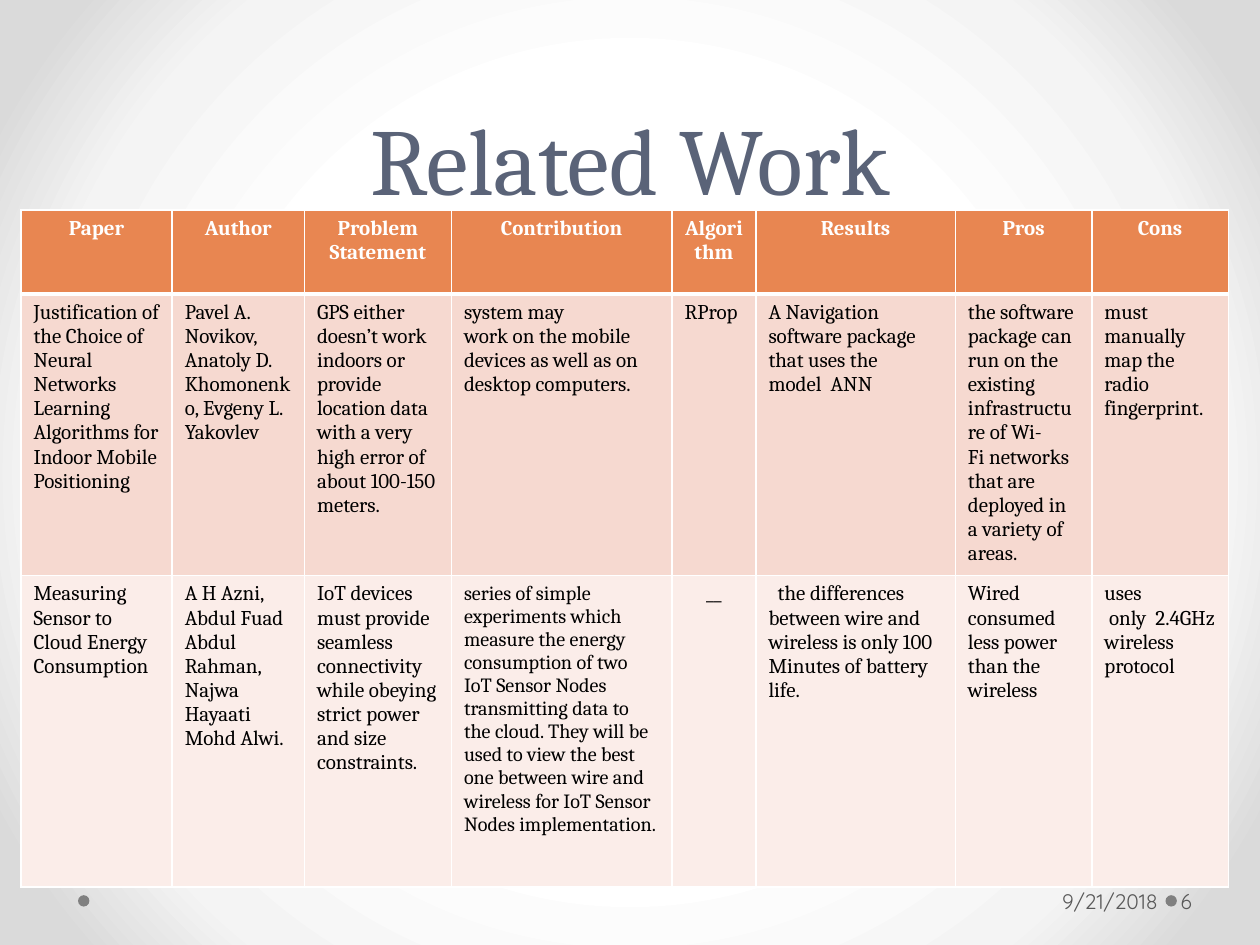
from lxml import etree
from pptx import Presentation
from pptx.dml.color import RGBColor
from pptx.enum.shapes import MSO_SHAPE
from pptx.enum.text import MSO_ANCHOR, PP_ALIGN
from pptx.oxml.ns import qn
from pptx.util import Pt

LEFT, MID, RIGHT = PP_ALIGN.LEFT, PP_ALIGN.CENTER, PP_ALIGN.RIGHT
TOP, CENTRE, BASE = MSO_ANCHOR.TOP, MSO_ANCHOR.MIDDLE, MSO_ANCHOR.BOTTOM
OVAL = MSO_SHAPE.OVAL

WHITE = RGBColor(0xFF, 0xFF, 0xFF)
BLACK = RGBColor(0, 0, 0)
SLATE = RGBColor(0x5A, 0x63, 0x78)
GREY = RGBColor(0x59, 0x59, 0x59)
DOT = RGBColor(0x80, 0x80, 0x80)
ORANGE = RGBColor(0xE8, 0x86, 0x51)
PEACH = RGBColor(0xF6, 0xD9, 0xD0)
BLUSH = RGBColor(0xFB, 0xED, 0xE9)
GLOW = [(50, WHITE), (76, RGBColor(0xF4, 0xF4, 0xF4)),
        (92, RGBColor(0xDA, 0xDA, 0xDA))]

SERIF, SANS = "Cambria", "Quicksand"

WIDTHS = [86.4, 75.6, 84, 126, 48, 114, 78, 78]
HEIGHTS = [48, 161, 178]
FILLS = [ORANGE, PEACH, BLUSH]
ROWS = [
    ["Paper", "Author", "Problem Statement", "Contribution",
     "Algorithm", "Results", "Pros", "Cons"],
    ["Justification of the Choice of Neural Networks Learning Algorithms "
     "for Indoor Mobile Positioning",
     "Pavel A. Novikov,  Anatoly D. Khomonenko, Evgeny L. Yakovlev",
     "GPS either doesn’t work indoors or provide location data with a very "
     "high error of about 100-150 meters.",
     "system may\nwork on the mobile devices as well as on desktop computers.",
     "RProp",
     "A Navigation software package that uses the\nmodel  ANN",
     "the software package can run on the existing infrastructure of Wi-\n"
     "Fi networks that are deployed in a variety of areas.",
     "must manually map the radio\nfingerprint."],
    ["Measuring Sensor to Cloud Energy Consumption",
     "A H Azni, Abdul Fuad Abdul Rahman, Najwa Hayaati Mohd Alwi.",
     "IoT devices must provide seamless connectivity while obeying\n"
     "strict power and size constraints.",
     "series of simple experiments which measure the energy consumption of "
     "two IoT Sensor Nodes transmitting data to the cloud. They will be used "
     "to view the best one between wire and wireless for IoT Sensor Nodes "
     "implementation.",
     "__",
     "  the differences between wire and wireless is only 100\n"
     "Minutes of battery life.",
     "Wired consumed less power than the wireless",
     "uses\n only  2.4GHz wireless protocol"],
]


def write(frame, text, size=12, font=SERIF, color=BLACK, bold=False,
          align=LEFT, anchor=TOP, space=None):
    """Fill a text frame, one paragraph for each line of text."""
    frame.word_wrap = True
    frame.vertical_anchor = anchor
    frame.text = text
    for para in frame.paragraphs:
        para.alignment = align
        if space:
            para.line_spacing = Pt(space)
        for run in para.runs:
            run.font.size = Pt(size)
            run.font.name = font
            run.font.bold = bold
            run.font.color.rgb = color


def paint_back(slide):
    """Radial glow, white at the centre."""
    slide.background.fill.solid()
    solid = next(slide.element.iter(qn("a:solidFill")))
    grad = etree.Element(qn("a:gradFill"), rotWithShape="1")
    stops = etree.SubElement(grad, qn("a:gsLst"))
    for pos, color in GLOW:
        stop = etree.SubElement(stops, qn("a:gs"), pos=str(pos * 1000))
        etree.SubElement(stop, qn("a:srgbClr"), val=str(color))
    ring = etree.SubElement(grad, qn("a:path"), path="circle")
    etree.SubElement(ring, qn("a:fillToRect"),
                     {side: "50000" for side in "ltrb"})
    solid.getparent().replace(solid, grad)


def add_title(slide, left, top, width, height):
    title = slide.shapes.title
    title.left, title.top = Pt(left), Pt(top)
    title.width, title.height = Pt(width), Pt(height)
    write(title.text_frame, "Related Work", size=54, color=SLATE,
          align=MID, anchor=BASE, space=58)


def edge_cell(cell, row):
    """White cell borders, thicker under the header."""
    thick = {0: "B", 1: "T"}.get(row)
    props = cell._tc.get_or_add_tcPr()
    for i, side in enumerate("LRTB"):
        width = Pt(3 if side == thick else 1)
        line = etree.Element(qn("a:ln" + side), w=str(width))
        fill = etree.SubElement(line, qn("a:solidFill"))
        etree.SubElement(fill, qn("a:srgbClr"), val=str(WHITE))
        props.insert(i, line)


def add_grid(slide, left, top):
    """Comparison table of the papers."""
    grid = slide.shapes.add_table(
        len(HEIGHTS), len(WIDTHS), Pt(left), Pt(top),
        Pt(sum(WIDTHS)), Pt(sum(HEIGHTS))).table
    for col, width in zip(grid.columns, WIDTHS):
        col.width = Pt(width)
    for r, texts in enumerate(ROWS):
        grid.rows[r].height = Pt(HEIGHTS[r])
        head = r == 0
        for c, text in enumerate(texts):
            cell = grid.cell(r, c)
            write(cell.text_frame, text, bold=head,
                  size=11.5 if (r, c) == (2, 3) else 12,
                  color=WHITE if head else BLACK,
                  align=MID if head or text == "__" else LEFT)
            cell.fill.solid()
            cell.fill.fore_color.rgb = FILLS[r]
            edge_cell(cell, r)


def add_foot(slide, top, height):
    """Dots, date and page number along the bottom."""
    size = 6.5
    for left in (44.6, 666):
        dot = slide.shapes.add_shape(
            OVAL, Pt(left), Pt(top + (height - size) / 2), Pt(size), Pt(size))
        dot.shadow.inherit = False
        dot.fill.solid()
        dot.fill.fore_color.rgb = DOT
        dot.line.fill.background()
    notes = [("9/21/2018", 501, 164.2, RIGHT, 7.2),
             ("6", 672.5, 44, LEFT, 2.2)]
    for text, left, width, align, inset in notes:
        box = slide.shapes.add_textbox(Pt(left), Pt(top), Pt(width), Pt(height))
        frame = box.text_frame
        frame.margin_left, frame.margin_right = Pt(inset), Pt(3.6)
        write(frame, text, font=SANS, color=GREY, align=align, anchor=CENTRE)


def main():
    deck = Presentation()
    deck.slide_width, deck.slide_height = Pt(720), Pt(540)
    slide = deck.slides.add_slide(deck.slide_layouts[5])
    paint_back(slide)
    add_title(slide, 36, 0, 648, 126)
    add_grid(slide, 12, 120)
    add_foot(slide, 500.4, 28.8)
    deck.save("out.pptx")


if __name__ == "__main__":
    main()
